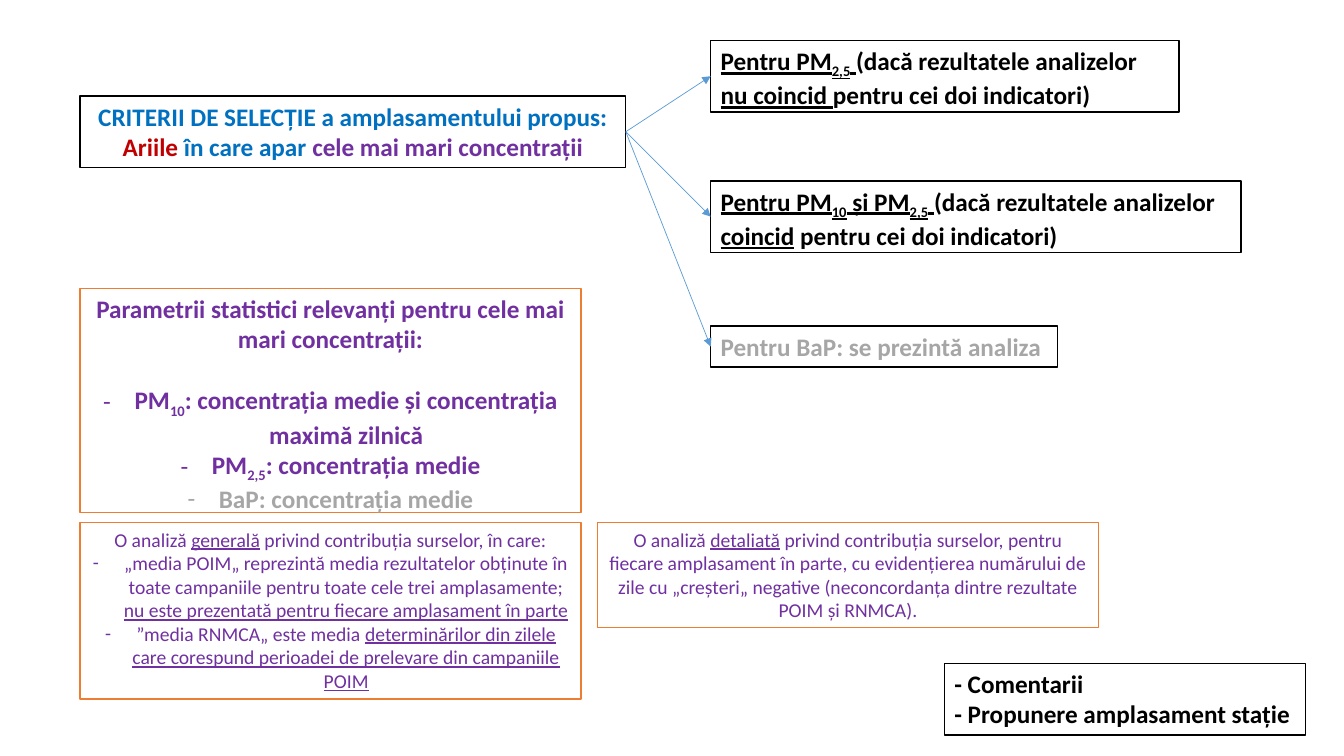
from dataclasses import dataclass

from lxml import etree
from pptx import Presentation
from pptx import util as u
from pptx.dml.color import RGBColor
from pptx.enum import shapes, text
from pptx.oxml.ns import qn


@dataclass(frozen=True)
class Theme:
    font: str = "Calibri"
    head: int = 18
    body: int = 14
    black: str = "000000"
    white: str = "FFFFFF"
    blue: str = "0070C0"
    red: str = "C00000"
    purple: str = "7030A0"
    grey: str = "A6A6A6"
    orange: str = "ED7D31"
    arrow: str = "5B9BD5"


T = Theme()


def rgb(value):
    return RGBColor.from_string(value)


def add_run(p, content, size=T.head, color=T.black, bold=True, underline=False, sub=False):
    r = p.add_run()
    r.text = content
    f = r.font
    f.name, f.size, f.bold, f.underline = T.font, u.Pt(size), bold, underline
    f.color.rgb = rgb(color)
    if sub:
        f._element.set("baseline", "-25000")


def para(*runs, bullet=False, after=0):
    return runs, bullet, after


class Deck:
    def __init__(self, theme, width, height):
        self.theme = theme
        self.prs = Presentation()
        self.prs.slide_width, self.prs.slide_height = u.Cm(width), u.Cm(height)
        self.s = self.prs.slides.add_slide(self.prs.slide_layouts[6])

    def box(self, x, y, w, h, paragraphs, line=T.black, center=False, **style):
        sp = self.s.shapes.add_shape(shapes.MSO_SHAPE.RECTANGLE, *map(u.Cm, (x, y, w, h)))
        sp.shadow.inherit = False
        sp.fill.solid()
        sp.fill.fore_color.rgb = rgb(self.theme.white)
        sp.line.color.rgb = rgb(line)
        sp.line.width = u.Pt(1)
        tf = sp.text_frame
        tf.word_wrap = True
        tf.vertical_anchor = text.MSO_ANCHOR.TOP
        for i, (runs, bullet, after) in enumerate(paragraphs):
            p = tf.add_paragraph() if i else tf.paragraphs[0]
            p.alignment = text.PP_ALIGN.CENTER if center else text.PP_ALIGN.LEFT
            p.space_after = u.Pt(after)
            if bullet:
                self.dash(p)
            for content, *extra in runs:
                add_run(p, content, **{**style, **(extra[0] if extra else {})})
        return sp

    def dash(self, p):
        pPr = p._p.get_or_add_pPr()
        pPr.set("marL", str(u.Cm(0.79)))
        pPr.set("indent", str(-u.Cm(0.79)))
        etree.SubElement(pPr, qn("a:buFont"), typeface=self.theme.font)
        etree.SubElement(pPr, qn("a:buChar"), char="-")

    def arrow(self, start, end):
        c = self.s.shapes.add_connector(shapes.MSO_CONNECTOR.STRAIGHT, 0, 0, 0, 0)
        c.begin_connect(start, 3)
        c.end_connect(end, 1)
        c.line.color.rgb = rgb(self.theme.arrow)
        c.line.width = u.Pt(0.5)
        etree.SubElement(c.line._get_or_add_ln(), qn("a:tailEnd"), type="triangle")
        etree.SubElement(c._element.spPr, qn("a:effectLst"))


def main():
    deck = Deck(T, 33.87, 19.05)
    left, branch_x, panel_w, analysis_y = 2.02, 17.91, 12.62, 13.17
    two_lines = 1.8
    line = {"underline": True}
    sub = {"sub": True}
    line_sub = {**line, **sub}
    panel = {"line": T.orange, "center": True, "color": T.purple}
    analysis = {**panel, "size": T.body, "bold": False}

    criteria = deck.box(left, 2.42, 13.75, two_lines, [
        para(("CRITERII DE SELECȚIE a amplasamentului propus:",)),
        para(("Ariile", {"color": T.red}), (" în care apar ",),
             ("cele mai mari concentrații", {"color": T.purple})),
    ], center=True, color=T.blue)

    deck.box(left, 7.27, panel_w, 5.65, [
        para(("Parametrii statistici relevanți pentru cele mai mari concentrații:",), after=22),
        para(("PM",), ("10", sub), (": concentrația medie și concentrația maximă zilnică",),
             bullet=True),
        para(("PM",), ("2,5", sub), (": concentrația medie",), bullet=True),
        para(("BaP: concentrația medie", {"color": T.grey}), bullet=True),
    ], **panel)

    results = "(dacă rezultatele analizelor "
    both = " pentru cei doi indicatori)"
    branches = [
        (1.02, 11.8, two_lines, [
            ("Pentru PM", line), ("2,5", line_sub), (" ", line), (results,),
            ("nu coincid ", line), (both.lstrip(),)]),
        (4.56, 13.37, two_lines, [
            ("Pentru PM", line), ("10", line_sub), (" și PM", line), ("2,5", line_sub),
            (" ", line), (results,), ("coincid", line), (both,)]),
        (8.22, 8.74, 1.03, [("Pentru BaP: se prezintă analiza", {"color": T.grey})]),
    ]
    targets = [deck.box(branch_x, y, w, h, [para(*runs)]) for y, w, h, runs in branches]
    for target in targets:
        deck.arrow(criteria, target)

    deck.box(left, analysis_y, panel_w, 4.45, [
        para(("O analiză ",), ("generală", line), (" privind contribuția surselor, în care:",)),
        para(("„media POIM„ reprezintă media rezultatelor obținute în toate campaniile "
              "pentru toate cele trei amplasamente; ",),
             ("nu este prezentată pentru fiecare amplasament în parte", line), bullet=True),
        para(("”media RNMCA„ este media ",),
             ("determinărilor din zilele care corespund perioadei de prelevare "
              "din campaniile POIM", line), bullet=True),
    ], **analysis)

    deck.box(23.8, 16.72, 9.1, two_lines, [
        para(("- Comentarii",)),
        para(("- Propunere amplasament stație",)),
    ])

    deck.box(15.06, analysis_y, panel_w, 2.64, [
        para(("O analiză ",), ("detaliată", line),
             (" privind contribuția surselor, pentru fiecare amplasament în parte, "
              "cu evidențierea numărului de zile cu „creșteri„ negative "
              "(neconcordanța dintre rezultate POIM și RNMCA).",)),
    ], **analysis)

    deck.prs.save("out.pptx")


if __name__ == "__main__":
    main()
